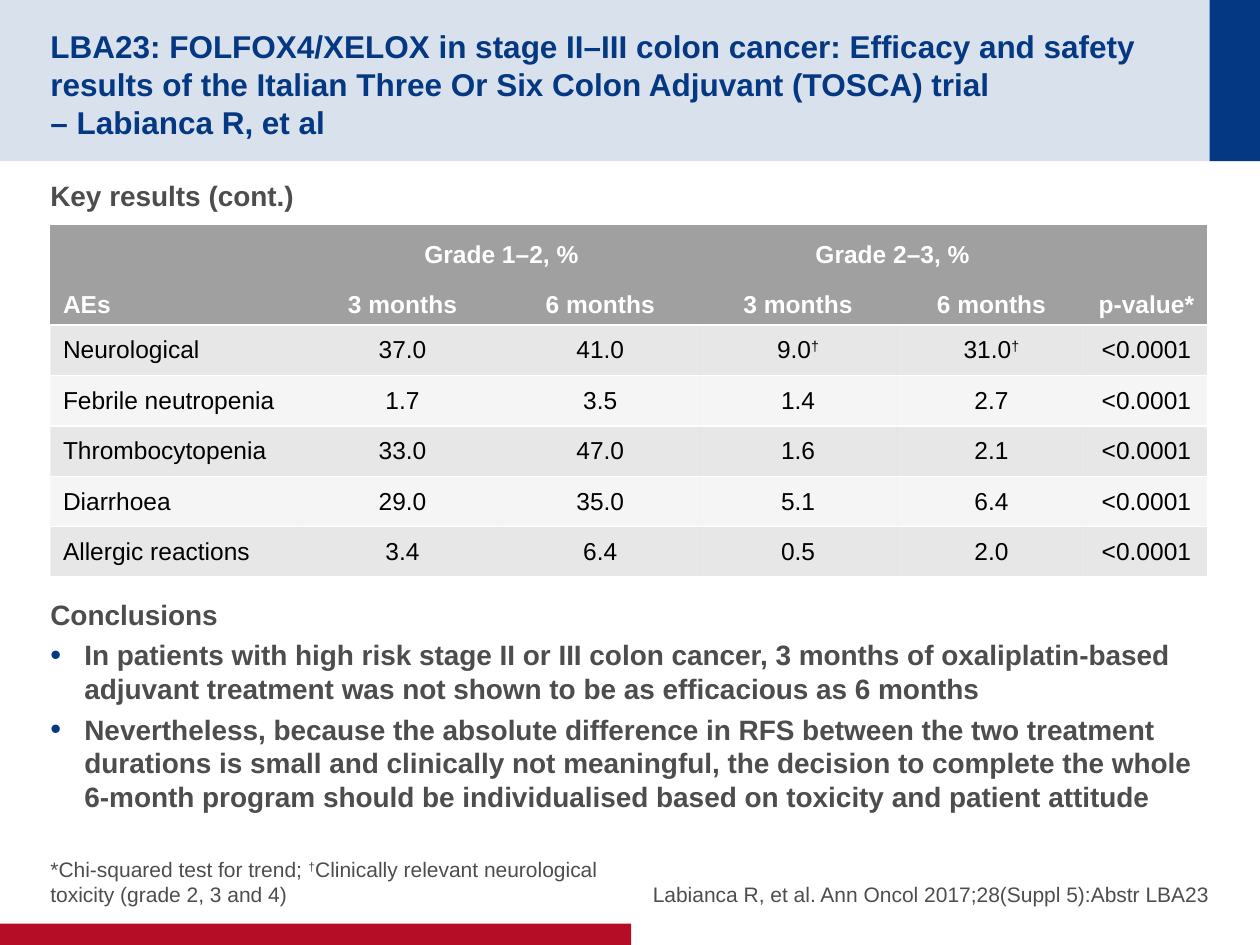
from dataclasses import dataclass

from lxml import etree
from pptx import Presentation
from pptx import util as u
from pptx.dml.color import RGBColor
from pptx.enum import shapes, text
from pptx.oxml.ns import qn


@dataclass(frozen=True)
class Theme:
    font: str = "Arial"
    navy: str = "043882"
    red: str = "B60D27"
    ink: str = "4D4D4D"
    grey: str = "A0A0A0"
    white: str = "FFFFFF"
    black: str = "000000"
    title: float = 18
    body: float = 16
    table: float = 14
    note: float = 12


T = Theme()
LEFT, CENTER, RIGHT = text.PP_ALIGN.LEFT, text.PP_ALIGN.CENTER, text.PP_ALIGN.RIGHT
TOP, MIDDLE, BOTTOM = text.MSO_ANCHOR.TOP, text.MSO_ANCHOR.MIDDLE, text.MSO_ANCHOR.BOTTOM

TITLE = (
    "LBA23: FOLFOX4/XELOX in stage II–III colon cancer: Efficacy and safety "
    "results of the Italian Three Or Six Colon Adjuvant (TOSCA) trial\v– Labianca R, et al"
)
HEADINGS = ["Key results (cont.)", "Conclusions"]
CONCLUSIONS = [
    "In patients with high risk stage II or III colon cancer, 3 months of oxaliplatin-based "
    "adjuvant treatment was not shown to be as efficacious as 6 months",
    "Nevertheless, because the absolute difference in RFS between the two treatment durations "
    "is small and clinically not meaningful, the decision to complete the whole 6-month program "
    "should be individualised based on toxicity and patient attitude",
]
FOOTNOTE = "*Chi-squared test for trend; †Clinically relevant neurological toxicity (grade 2, 3 and 4)"
CITATION = "Labianca R, et al. Ann Oncol 2017;28(Suppl 5):Abstr LBA23"

ROWS = [
    ["AEs", "Grade 1–2, %", "", "Grade 2–3, %", "", "p-value*"],
    ["", "3 months", "6 months", "3 months", "6 months", ""],
    ["Neurological", "37.0", "41.0", "9.0†", "31.0†", "<0.0001"],
    ["Febrile neutropenia", "1.7", "3.5", "1.4", "2.7", "<0.0001"],
    ["Thrombocytopenia", "33.0", "47.0", "1.6", "2.1", "<0.0001"],
    ["Diarrhoea", "29.0", "35.0", "5.1", "6.4", "<0.0001"],
    ["Allergic reactions", "3.4", "6.4", "0.5", "2.0", "<0.0001"],
]
MERGES = [((0, 0), (1, 0)), ((0, 1), (0, 2)), ((0, 3), (0, 4)), ((0, 5), (1, 5))]
COLUMN_WIDTHS = [2.01, 1.57, 1.57, 1.57, 1.5, 0.96]
ROW_HEIGHT = 0.4
HEADER_ROWS = 2
PLAIN_TABLE = "{2D5ABB26-0587-4C30-8999-92F81FD0307C}"

BANDS = [
    ((0, 0, 10, 1.28), T.navy, 15),
    ((9.6, 0, 0.4, 1.28), T.navy, 100),
    ((0, 7.33, 5.01, 0.17), T.red, 100),
]


def paint(fill, color, opacity=100):
    fill.solid()
    fill.fore_color.rgb = RGBColor.from_string(color)
    if opacity < 100:
        clr = fill._xPr.find(f"{qn('a:solidFill')}/{qn('a:srgbClr')}")
        etree.SubElement(clr, qn("a:alpha"), val=str(opacity * 1000))


def write(p, content, size, color, bold=False, align=LEFT):
    p.alignment = align
    p.font.name, p.font.size, p.font.bold = T.font, u.Pt(size), bold
    p.font.color.rgb = RGBColor.from_string(color)
    before, dagger, after = content.partition("†")
    if not dagger:
        p.text = content
        return
    for part in filter(None, (before, dagger, after)):
        r = p.add_run()
        r.text = part
        if part == dagger:
            r.font._element.set("baseline", "30000")


def add_text_box(s, box, anchor, top=0, bottom=0):
    tf = s.shapes.add_textbox(*map(u.Inches, box)).text_frame
    tf.word_wrap = True
    tf.vertical_anchor = anchor
    tf.margin_left = tf.margin_right = 0
    tf.margin_top, tf.margin_bottom = u.Inches(top), u.Inches(bottom)
    return tf


def add_bullet(p):
    pPr = p._p.get_or_add_pPr()
    pPr.set("marL", str(u.Inches(0.27)))
    pPr.set("indent", str(-u.Inches(0.27)))
    bullet = [
        etree.Element(qn("a:buClr")),
        etree.Element(qn("a:buSzPct"), val="110000"),
        etree.Element(qn("a:buFont"), typeface=T.font),
        etree.Element(qn("a:buChar"), char="•"),
    ]
    etree.SubElement(bullet[0], qn("a:srgbClr"), val=T.navy)
    place = pPr.index(pPr.find(qn("a:defRPr")))
    for offset, element in enumerate(bullet):
        pPr.insert(place + offset, element)


def add_border(cell, side):
    ln = etree.Element(qn(f"a:{side}"), w=str(u.Pt(1)))
    fill = etree.SubElement(ln, qn("a:solidFill"))
    etree.SubElement(fill, qn("a:srgbClr"), val=T.white)
    cell._tc.get_or_add_tcPr().insert(0, ln)


def add_results_table(s):
    frame = s.shapes.add_table(
        len(ROWS), len(COLUMN_WIDTHS), u.Inches(0.4), u.Inches(1.78),
        u.Inches(sum(COLUMN_WIDTHS)), u.Inches(ROW_HEIGHT * len(ROWS)),
    )
    table = frame.table
    table.first_row = table.horz_banding = False
    table._tbl.tblPr.find(qn("a:tableStyleId")).text = PLAIN_TABLE
    for column, width in zip(table.columns, COLUMN_WIDTHS):
        column.width = u.Inches(width)
    for row in table.rows:
        row.height = u.Inches(ROW_HEIGHT)
    for start, end in MERGES:
        table.cell(*start).merge(table.cell(*end))
    for i, row in enumerate(ROWS):
        header = i < HEADER_ROWS
        opacity = 100 if header else (25, 10)[i % 2]
        for j, value in enumerate(row):
            cell = table.cell(i, j)
            cell.vertical_anchor = BOTTOM if header else MIDDLE
            paint(cell.fill, T.grey, opacity)
            if i or cell.is_merge_origin and cell.span_height > 1:
                add_border(cell, "lnB")
            if i == 0:
                add_border(cell, "lnT")
            p = cell.text_frame.paragraphs[0]
            p.space_before = u.Pt(0.2 * T.table)
            write(p, value, T.table, T.white if header else T.black, header, CENTER if j else LEFT)


def main():
    prs = Presentation()
    prs.slide_width, prs.slide_height = u.Inches(10), u.Inches(7.5)
    s = prs.slides.add_slide(prs.slide_layouts[6])

    for box, color, opacity in BANDS:
        band = s.shapes.add_shape(shapes.MSO_SHAPE.RECTANGLE, *map(u.Inches, box))
        band.shadow.inherit = False
        band.line.fill.background()
        paint(band.fill, color, opacity)

    tf = add_text_box(s, (0.4, 1.37, 9.2, 5.19), TOP, 0.05, 0.05)
    for i, content in enumerate(HEADINGS + CONCLUSIONS):
        p = tf.add_paragraph() if i else tf.paragraphs[0]
        p.space_before = u.Pt(216 if content == HEADINGS[1] else 0)
        p.space_after = u.Pt(4)
        write(p, content, T.body, T.ink, True)
        if content in CONCLUSIONS:
            add_bullet(p)

    tf = add_text_box(s, (0.4, 0.2, 9.01, 0.88), MIDDLE, 0.05)
    write(tf.paragraphs[0], TITLE, T.title, T.navy, True)

    add_results_table(s)

    for left, content, align in [(0.4, FOOTNOTE, LEFT), (5.08, CITATION, RIGHT)]:
        tf = add_text_box(s, (left, 6.67, 4.52, 0.53), BOTTOM)
        tf.paragraphs[0].space_after = u.Pt(4)
        write(tf.paragraphs[0], content, T.note, T.ink, align=align)

    prs.save("out.pptx")


if __name__ == "__main__":
    main()
